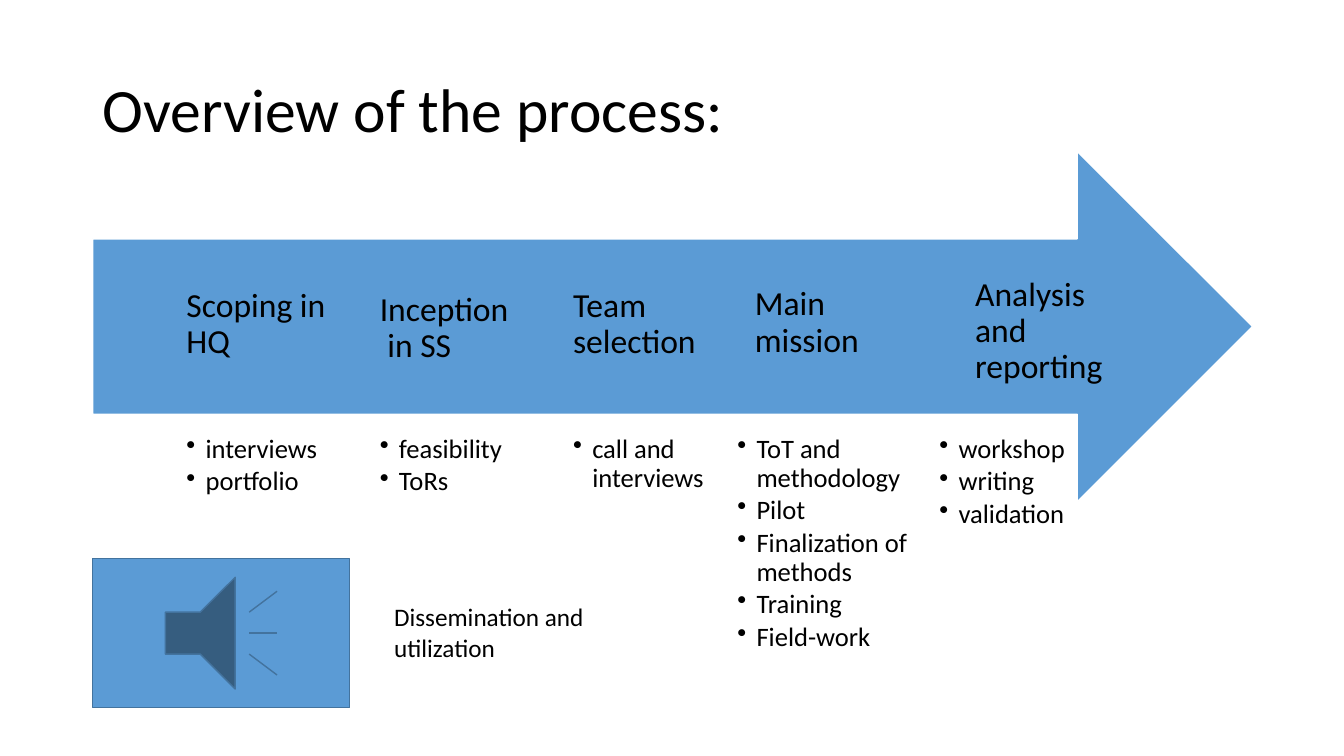
from lxml.etree import SubElement
from pptx import Presentation
from pptx.dml.color import RGBColor
from pptx.enum.shapes import MSO_SHAPE
from pptx.enum.text import MSO_ANCHOR, MSO_AUTO_SIZE, PP_ALIGN
from pptx.oxml.ns import qn
from pptx.util import Inches, Pt

BLUE = RGBColor(0x5B, 0x9B, 0xD5)
EDGE = RGBColor(0x43, 0x73, 0x9E)
WHITE = RGBColor(0xFF, 0xFF, 0xFF)
BLACK = RGBColor(0, 0, 0)
WIDE, HIGH = Inches(13.33), Inches(7.5)

FONT = {"name": "Calibri"}
PLAIN = {"alignment": PP_ALIGN.LEFT}
TIGHT = PLAIN | {"line_spacing": 0.9}
HEAD = TIGHT | {"space_after": Pt(8.4)}
DENSE = HEAD | {"line_spacing": 0.6}
LIST = TIGHT | {"space_after": Pt(2.8), "level": 1}
FLAT = {"margin_left": 0, "margin_right": 0, "margin_top": 0, "margin_bottom": 0}
MID = FLAT | {"margin_top": Inches(0.27), "margin_bottom": Inches(0.27),
              "vertical_anchor": MSO_ANCHOR.MIDDLE}

STEPS = [
    (0.485, 0.26, ["Scoping in HQ"], HEAD, 0.485, 5 / 6, ["interviews", "portfolio"]),
    (1.485, 0.28, ["Inception", " in SS"], DENSE, 1.485, 5 / 6, ["feasibility", "ToRs"]),
    (2.485, 0.26, ["Team selection"], HEAD, 2.485, 5 / 6, ["call and interviews"]),
    (3.425, 0.255, ["Main mission"], HEAD, 3.335, 0.91,
     ["ToT and methodology", "Pilot", "Finalization of methods", "Training", "Field-work"]),
    (4.565, 0.28, ["Analysis and reporting"], HEAD, 4.38, 5 / 6,
     ["workshop", "writing", "validation"]),
]


def put(item, vals):
    """Set each named value on the item."""
    for name, val in vals.items():
        setattr(item, name, val)


def part(box, x, y, w, h):
    """Return the part of a box given by shares of its size."""
    left, top, wide, high = box
    return (round(left + x * wide), round(top + y * high),
            round(w * wide), round(h * high))


def write(frame, lines, size, look, form):
    """Fill a text frame with one formatted paragraph a line."""
    put(frame, {"word_wrap": True, "auto_size": MSO_AUTO_SIZE.NONE} | form)
    frame.text = "\n".join(lines)
    for para in frame.paragraphs:
        put(para, look)
        put(para.font, FONT | {"size": Pt(size)})
        para.font.color.rgb = BLACK


def dot(frame):
    """Give each paragraph a hanging bullet."""
    for para in frame.paragraphs:
        props = para._p.get_or_add_pPr()
        props.set("marL", str(Inches(0.19)))
        props.set("indent", str(-Inches(0.19)))
        SubElement(props, qn("a:buChar"), char="•")


def block(slide, kind, box, edge):
    """Add a blue shape with a thin edge."""
    shape = slide.shapes.add_shape(kind, *box)
    shape.shadow.inherit = False
    shape.fill.solid()
    shape.fill.fore_color.rgb = BLUE
    shape.line.color.rgb = edge
    shape.line.width = Pt(1)


def title(slide, box):
    """Place the slide title."""
    head = slide.shapes.title
    put(head, dict(zip(("left", "top", "width", "height"), box)))
    write(head.text_frame, ["Overview of the process:"], 44, TIGHT,
          {"vertical_anchor": MSO_ANCHOR.MIDDLE})


def flow(slide, box):
    """Draw the arrow with its steps in six columns."""
    block(slide, MSO_SHAPE.RIGHT_ARROW, box, WHITE)
    for x, y, head, look, left, wide, tasks in STEPS:
        note = slide.shapes.add_textbox(*part(box, left / 6, 0.81, wide / 6, 0.64))
        write(note.text_frame, tasks, 19, LIST, FLAT)
        dot(note.text_frame)
        name = slide.shapes.add_textbox(*part(box, x / 6, y, 5 / 36, 0.47))
        write(name.text_frame, head, 24, look, MID)


def foot(slide, box):
    """Place the sound button and the closing step."""
    block(slide, MSO_SHAPE.ACTION_BUTTON_SOUND, part(box, 0, 0, 0.425, 1), EDGE)
    note = slide.shapes.add_textbox(*part(box, 0.482, 0.255, 0.518, 0.48))
    write(note.text_frame, ["Dissemination and utilization"], 18, PLAIN, {})


def main():
    """Build and save the slide."""
    deck = Presentation()
    put(deck, {"slide_width": WIDE, "slide_height": HIGH})
    slide = deck.slides.add_slide(deck.slide_layouts[5])
    page = (0, 0, WIDE, HIGH)
    title(slide, part(page, 0.069, 0.053, 0.863, 0.193))
    flow(slide, part(page, 0.069, 0.2, 0.863, 0.464))
    foot(slide, part(page, 0.069, 0.739, 0.45, 0.197))
    deck.save("out.pptx")


if __name__ == "__main__":
    main()
